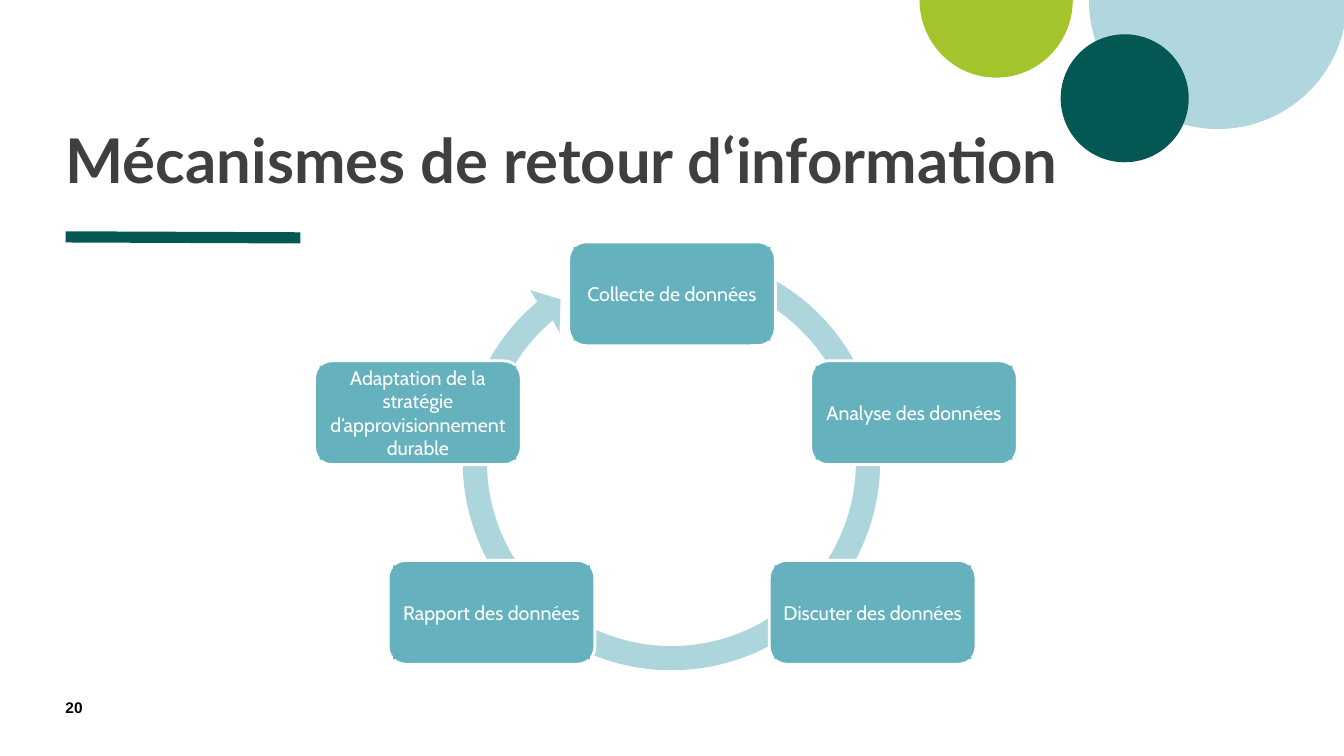
from dataclasses import dataclass
from math import cos, radians, sin, tan

from lxml import etree
from pptx import Presentation
from pptx import util as u
from pptx.dml.color import RGBColor
from pptx.enum import shapes, text
from pptx.oxml.ns import qn


@dataclass(frozen=True)
class Theme:
    dark_green: str = "035854"
    lime: str = "A3C42A"
    pale_blue: str = "AFD7DD"
    teal: str = "65B1BE"
    white: str = "FFFFFF"
    heading: str = "3F3F3F"
    black: str = "000000"
    title_size: int = 44
    step_size: int = 14
    number_size: int = 11


THEME = Theme()
RING_CENTRE = (6.66, 4.58)
OUTER_RADIUS, INNER_RADIUS = 2.07, 1.83
RING_START, RING_END = -70, 230
ARC_PIECES = 5
ARROWHEAD = [(5.26, 2.88), (5.56, 2.97), (5.55, 3.3)]
STEP_WIDTH, STEP_HEIGHT, STEP_INSET = 2.05, 1.03, 0.05
STEPS = [
    ("Collecte de données", 5.64, 2.4),
    ("Analyse des données", 8.04, 3.58),
    ("Discuter des données", 7.63, 5.56),
    ("Rapport des données", 3.85, 5.56),
    ("Adaptation de la stratégie d‘approvisionnement durable", 3.12, 3.58),
]


def apply_format(target, values):
    for name, value in values.items():
        setattr(target, name, value)


def paint(shape, color):
    shape.shadow.inherit = False
    shape.fill.solid()
    shape.fill.fore_color.rgb = RGBColor.from_string(color)
    shape.line.fill.background()


def write_text(box, content, font, color, inset=0, anchor=text.MSO_ANCHOR.TOP, **para_format):
    frame = box.text_frame
    sides = ("left", "top", "right", "bottom")
    apply_format(frame, {f"margin_{side}": u.Inches(inset) for side in sides})
    apply_format(frame, {"word_wrap": True, "vertical_anchor": anchor})
    para = frame.paragraphs[0]
    apply_format(para, para_format)
    span = para.add_run()
    span.text = content
    apply_format(span.font, font)
    span.font.color.rgb = RGBColor.from_string(color)


def add_label(page, bounds, *args, **options):
    box = page.shapes.add_textbox(*map(u.Inches, bounds))
    write_text(box, *args, **options)


def add_shape(page, kind, bounds, color):
    shape = page.shapes.add_shape(kind, *map(u.Inches, bounds))
    paint(shape, color)
    return shape


def add_half_disc(page, bounds, color):
    """Draw the lower half of a disc cut by the top edge of the page."""
    disc = add_shape(page, shapes.MSO_SHAPE.PIE, bounds, color)
    disc.adjustments[1] = 108


def add_rule(page, start, end, width, color):
    rule = page.shapes.add_connector(
        shapes.MSO_CONNECTOR.STRAIGHT, *map(u.Inches, (*start, *end)))
    rule.line.width = u.Pt(width)
    rule.line.color.rgb = RGBColor.from_string(color)
    etree.SubElement(rule._element.spPr, qn("a:effectLst"))


def arc_points(radius, start, end):
    """Return the start point, then two handles and an end point per Bézier piece."""
    step = radians(end - start) / ARC_PIECES
    handle = 4 / 3 * tan(step / 4)

    def point(angle, lead):
        return (RING_CENTRE[0] + radius * (cos(angle) - lead * sin(angle)),
                RING_CENTRE[1] + radius * (sin(angle) + lead * cos(angle)))

    points = [point(radians(start), 0)]
    for piece in range(ARC_PIECES):
        angle = radians(start) + piece * step
        points += [point(angle, handle), point(angle + step, -handle), point(angle + step, 0)]
    return points


def bend(segments):
    """Turn each three straight segments into one cubic curve."""
    for first in range(0, len(segments), 3):
        curve = etree.Element(qn("a:cubicBezTo"))
        segments[first].addprevious(curve)
        for segment in segments[first:first + 3]:
            curve.append(segment[0])
            segment.getparent().remove(segment)


def add_ring_arrow(page, color, opacity):
    outer = arc_points(OUTER_RADIUS, RING_START, RING_END)
    inner = arc_points(INNER_RADIUS, RING_END, RING_START)
    points = [(u.Inches(x), u.Inches(y)) for x, y in outer + ARROWHEAD + inner]
    builder = page.shapes.build_freeform(*points[0])
    builder.add_line_segments(points[1:], close=True)
    ring = builder.convert_to_shape()
    paint(ring, color)
    segments = list(ring._element.spPr.iter(qn("a:lnTo")))
    curve_length = 3 * ARC_PIECES
    bend(segments[:curve_length])
    bend(segments[-curve_length:])
    fill_color = ring._element.spPr.find(qn("a:solidFill"))[0]
    etree.SubElement(fill_color, qn("a:alpha"), val=str(opacity * 1000))


def add_step(page, label, left, top):
    card = add_shape(page, shapes.MSO_SHAPE.ROUNDED_RECTANGLE,
                     (left, top, STEP_WIDTH, STEP_HEIGHT), THEME.teal)
    card.line.color.rgb = RGBColor.from_string(THEME.white)
    card.line.width = u.Pt(2)
    panel = add_shape(page, shapes.MSO_SHAPE.RECTANGLE,
                      (left + STEP_INSET, top + STEP_INSET,
                       STEP_WIDTH - 2 * STEP_INSET, STEP_HEIGHT - 2 * STEP_INSET), THEME.teal)
    write_text(panel, label, {"name": "Cabin", "size": u.Pt(THEME.step_size)}, THEME.white,
               inset=0.06, anchor=text.MSO_ANCHOR.MIDDLE, alignment=text.PP_ALIGN.CENTER)


def main():
    deck = Presentation()
    apply_format(deck, {"slide_width": u.Inches(13.33), "slide_height": u.Inches(7.5)})
    page = deck.slides.add_slide(deck.slide_layouts[6])

    add_rule(page, (0.65, 2.35), (2.98, 2.36), 8, THEME.dark_green)
    add_half_disc(page, (10.8, -1.28, 2.56, 2.56), THEME.pale_blue)
    add_half_disc(page, (9.12, -0.77, 1.52, 1.54), THEME.lime)
    add_shape(page, shapes.MSO_SHAPE.OVAL, (10.52, 0.34, 1.27, 1.27), THEME.dark_green)

    add_label(page, (0.65, 0.31, 10.69, 1.63), "Mécanismes de retour d‘information",
              {"name": "Lato", "size": u.Pt(THEME.title_size), "bold": True},
              THEME.heading, anchor=text.MSO_ANCHOR.BOTTOM, line_spacing=0.8)
    add_label(page, (0.65, 6.93, 0.57, 0.27), "20",
              {"name": "Arial", "size": u.Pt(THEME.number_size), "bold": True}, THEME.black)

    add_ring_arrow(page, THEME.teal, opacity=53)
    for step in STEPS:
        add_step(page, *step)
    deck.save("out.pptx")


if __name__ == "__main__":
    main()
